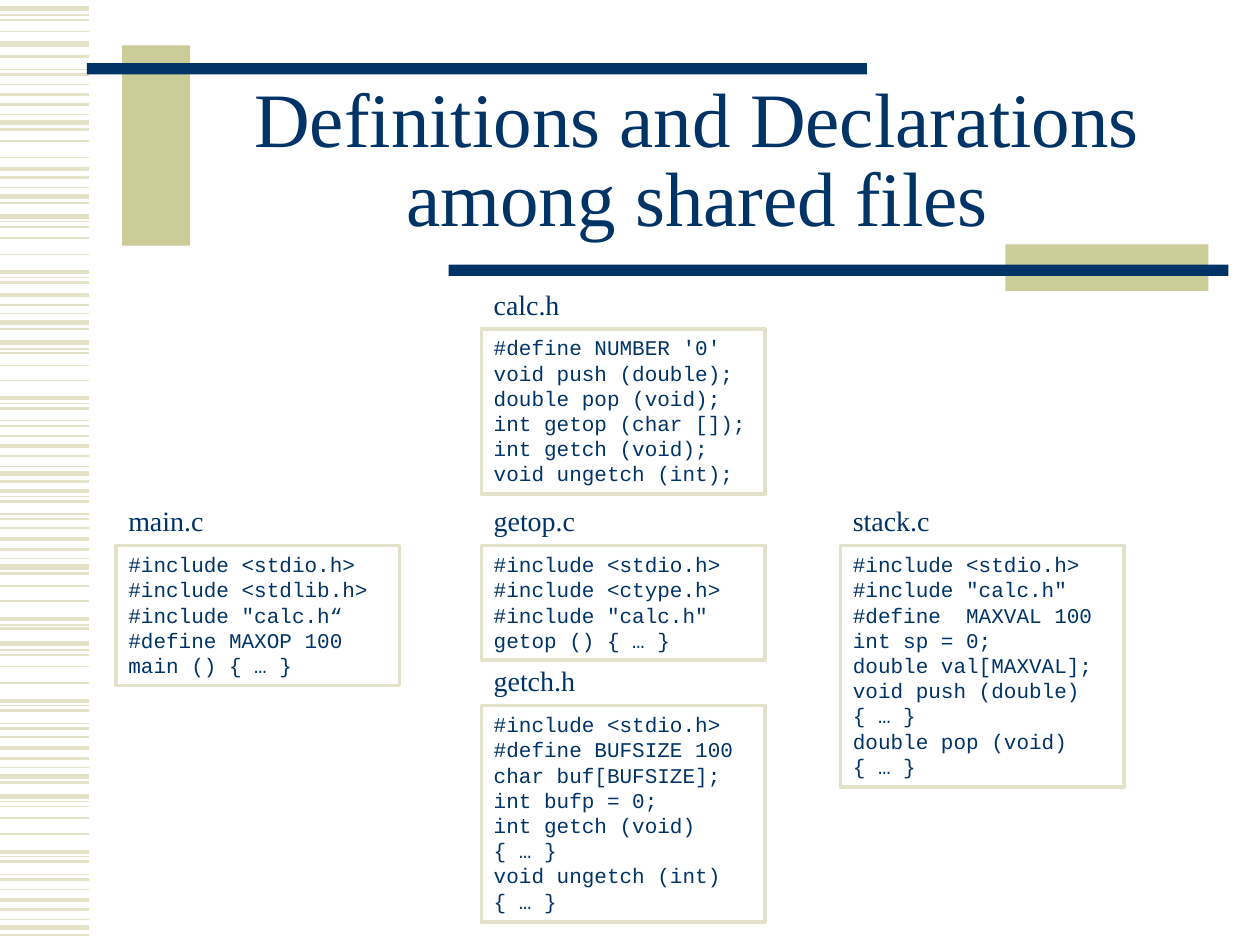
from dataclasses import dataclass

from lxml.etree import SubElement
from pptx import Presentation
from pptx.dml.color import RGBColor
from pptx.enum.shapes import MSO_CONNECTOR, MSO_SHAPE
from pptx.enum.text import MSO_ANCHOR, MSO_AUTO_SIZE, PP_ALIGN
from pptx.oxml.ns import qn
from pptx.util import Cm, Pt

NAVY, KHAKI, PALE_KHAKI, STRIPE, WHITE = "003366", "CCCC99", "E2E2CA", "E3E2C7", "FFFFFF"
SERIF, MONO = "Times New Roman", "Courier New"

# Margin stripes: line width in points -> heights in inches
STRIPES = {
    0.75: (0.12, 0.55, 0.91, 1.49, 1.76, 2.2, 2.49, 2.77, 3.2, 3.34, 3.7, 3.94,
           4.08, 4.43, 4.96, 5.16, 5.6, 5.74, 6.09, 6.36, 6.8, 6.94, 7.3),
    1: (0.16, 0.25, 0.67, 1.12, 1.25, 1.8, 1.89, 2.02, 2.8, 2.9, 3.02, 3.46,
        4.19, 4.65, 4.77, 5.2, 5.29, 5.42, 5.85, 6.4, 6.49, 6.62, 7.06),
    1.5: (0.45, 0.59, 0.83, 1.03, 1.41, 1.61, 2.24, 2.42, 2.61, 3.24, 3.38, 3.62, 3.82,
          3.98, 4.12, 4.36, 4.55, 4.99, 5.64, 5.78, 6.02, 6.21, 6.84, 6.98, 7.22, 7.42),
    2.25: (0.75, 1.34, 2.16, 2.34, 3.16, 3.54, 3.9, 4.28, 4.91, 5.56, 5.94, 6.76, 7.14),
    3: (0.07, 0.35, 0.97, 1.56, 1.72, 2.56, 2.72, 3.76, 4.5, 5.11, 6.16, 6.32, 7.36),
}
STRIPE_LENGTH = 0.71
CODE_WIDTH, LABEL_HEIGHT, LABEL_RISE = 2.25, 0.37, 0.38


@dataclass
class Bar:
    left: float
    top: float
    width: float
    height: float
    color: str


@dataclass
class SourceFile:
    name: str
    label_width: float
    left: float
    top: float
    paragraphs: list[str]

    @property
    def height(self) -> float:
        line_count = sum(len(text.split("\n")) for text in self.paragraphs)
        return 0.1 + 0.202 * line_count


BARS = [
    Bar(0.97, 0.36, 0.54, 1.59, KHAKI),
    Bar(0.69, 0.5, 6.19, 0.09, NAVY),
    Bar(7.98, 1.94, 1.61, 0.37, KHAKI),
    Bar(3.56, 2.1, 6.19, 0.09, NAVY),
]

FILES = [
    SourceFile("calc.h", 0.73, 3.82, 2.61, [
        "#define NUMBER '0'",
        "void push (double);",
        "double pop (void);",
        "int getop (char []);\nint getch (void);\nvoid ungetch (int);",
    ]),
    SourceFile("getop.c", 0.86, 3.82, 4.33, [
        '#include <stdio.h>\n#include <ctype.h>\n#include "calc.h"\ngetop () { … }',
    ]),
    SourceFile("getch.h", 0.86, 3.82, 5.6, [
        "#include <stdio.h>\n#define BUFSIZE 100\nchar buf[BUFSIZE];\nint bufp = 0;\n"
        "int getch (void) \n{ … }\nvoid ungetch (int)\n{ … }",
    ]),
    SourceFile("main.c", 0.81, 0.92, 4.33, [
        '#include <stdio.h>\n#include <stdlib.h>\n#include "calc.h“\n'
        "#define MAXOP 100\nmain () { … }",
    ]),
    SourceFile("stack.c", 0.82, 6.67, 4.33, [
        '#include <stdio.h>\n#include "calc.h"\n#define  MAXVAL 100\nint sp = 0;\n'
        "double val[MAXVAL];\nvoid push (double) \n{ … }\ndouble pop (void)\n{ … }",
    ]),
]


def length(inches: float) -> Cm:
    return Cm(inches * 2.54)


def place(*inches: float) -> list[Cm]:
    return [length(value) for value in inches]


def color(hex_code: str) -> RGBColor:
    return RGBColor.from_string(hex_code)


def write(frame, paragraphs: list[str], size: float, font: str, align=PP_ALIGN.LEFT) -> None:
    for index, text in enumerate(paragraphs):
        para = frame.add_paragraph() if index else frame.paragraphs[0]
        para.text = text
        para.alignment = align
        para.font.size = Pt(size)
        para.font.name = font
        para.font.color.rgb = color(NAVY)


def draw_stripe(page, height: float, weight: float) -> None:
    stripe = page.shapes.add_connector(
        MSO_CONNECTOR.STRAIGHT, *place(0, height, STRIPE_LENGTH, height))
    stripe.line.color.rgb = color(STRIPE)
    stripe.line.width = Pt(weight)
    SubElement(stripe._element.spPr, qn("a:effectLst"))


def draw_rectangle(page, left: float, top: float, width: float, height: float, fill: str):
    box = page.shapes.add_shape(MSO_SHAPE.RECTANGLE, *place(left, top, width, height))
    box.shadow.inherit = False
    box.fill.solid()
    box.fill.fore_color.rgb = color(fill)
    box.line.fill.background()
    return box


def draw_title(page, text: str) -> None:
    box = page.shapes.add_textbox(*place(1.5, 0.67, 8.07, 1.25))
    frame = box.text_frame
    frame.word_wrap = True
    frame.vertical_anchor = MSO_ANCHOR.MIDDLE
    write(frame, [text], 44, SERIF, PP_ALIGN.CENTER)
    frame.paragraphs[0].line_spacing = 0.85


def draw_file(page, file: SourceFile) -> None:
    # Code box
    box = draw_rectangle(page, file.left, file.top, CODE_WIDTH, file.height, WHITE)
    box.line.color.rgb = color(PALE_KHAKI)
    box.line.width = Pt(2)
    frame = box.text_frame
    frame.word_wrap = True
    frame.auto_size = MSO_AUTO_SIZE.SHAPE_TO_FIT_TEXT
    frame.vertical_anchor = MSO_ANCHOR.TOP
    write(frame, file.paragraphs, 12, MONO)

    # File name above it
    label = page.shapes.add_textbox(
        *place(file.left, file.top - LABEL_RISE, file.label_width, LABEL_HEIGHT))
    label.text_frame.word_wrap = False
    label.text_frame.auto_size = MSO_AUTO_SIZE.SHAPE_TO_FIT_TEXT
    write(label.text_frame, [file.name], 16, SERIF)


def main() -> None:
    deck = Presentation()
    deck.slide_width, deck.slide_height = place(10, 7.5)
    page = deck.slides.add_slide(deck.slide_layouts[6])

    # Striped margin and title bars
    for weight, heights in STRIPES.items():
        for height in heights:
            draw_stripe(page, height, weight)
    for bar in BARS:
        draw_rectangle(page, bar.left, bar.top, bar.width, bar.height, bar.color)

    # Title and source files
    draw_title(page, "Definitions and Declarations among shared files")
    for file in FILES:
        draw_file(page, file)

    deck.save("out.pptx")


if __name__ == "__main__":
    main()
